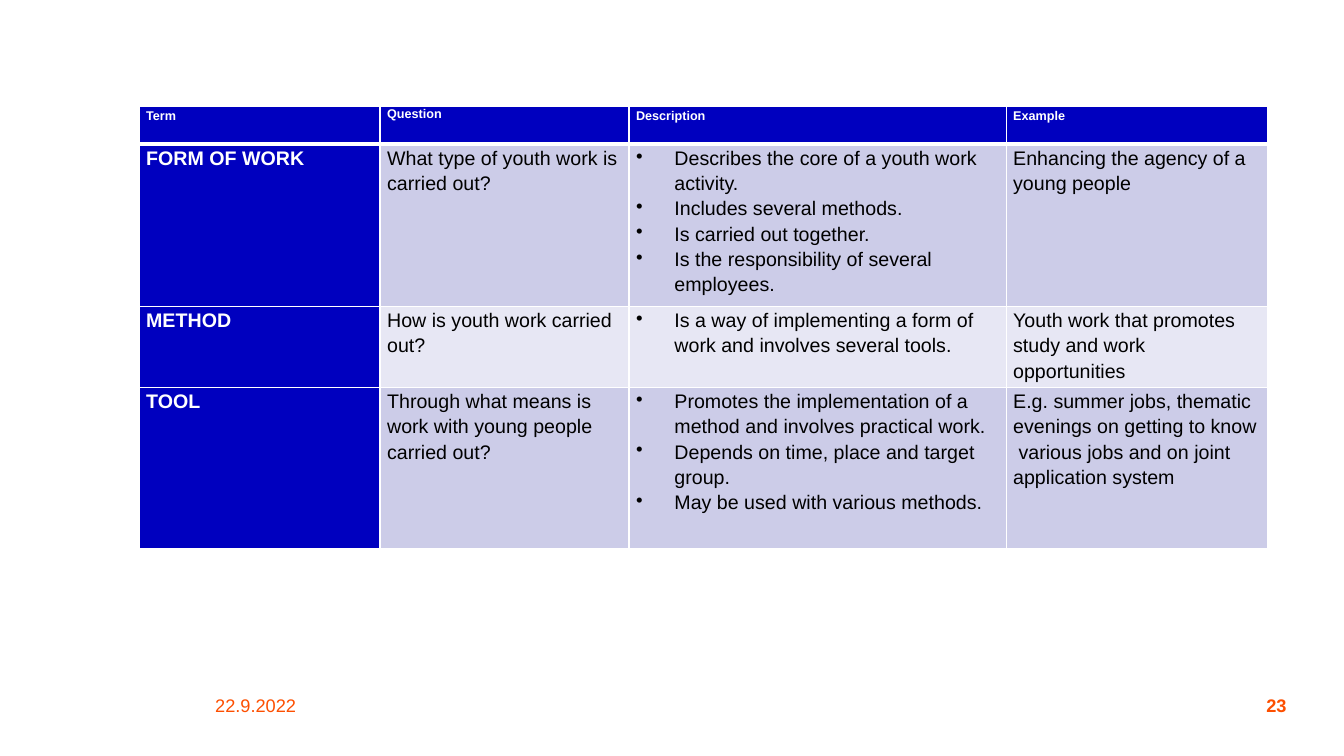
from lxml import etree
from pptx import Presentation
from pptx.dml.color import RGBColor
from pptx.enum import text
from pptx.oxml import ns
from pptx.util import Inches, Pt

COLORS = {"blue": "0000BF", "dark band": "CCCCE8", "light band": "E7E7F4",
          "white": "FFFFFF", "black": "000000", "orange": "FD4F00"}


def add_span(para, words, size, color, bold):
    span = para.add_run()
    span.text = words
    for name, value in {"name": "Arial", "size": Pt(size), "bold": bold}.items():
        setattr(span.font, name, value)
    span.font.color.rgb = RGBColor.from_string(COLORS[color])


def add_border(cell, side, width):
    line = etree.SubElement(cell._tc.get_or_add_tcPr(), ns.qn(f"a:ln{side}"), w=str(Pt(width)))
    fill = etree.SubElement(line, ns.qn("a:solidFill"))
    etree.SubElement(fill, ns.qn("a:srgbClr"), val=COLORS["white"])


deck = Presentation()
deck.slide_width = Inches(13.33)
deck.slide_height = Inches(7.5)
page = deck.slides.add_slide(deck.slide_layouts[6])

footers = [
    ("22.9.2022", 1.82, 1.43, text.PP_ALIGN.CENTER, False),
    ("23", 11.41, 1.35, text.PP_ALIGN.RIGHT, True),
]
for words, left, width, alignment, bold in footers:
    box = page.shapes.add_textbox(Inches(left), Inches(6.86), Inches(width), Inches(0.28))
    frame_format = {"word_wrap": True, "vertical_anchor": text.MSO_ANCHOR.MIDDLE,
                    "margin_left": 0, "margin_top": 0, "margin_right": 0, "margin_bottom": 0}
    for name, value in frame_format.items():
        setattr(box.text_frame, name, value)
    para = box.text_frame.paragraphs[0]
    para.alignment = alignment
    add_span(para, words, 13, "orange", bold)

rows = [
    ["Term", "Question", ["Description"], "Example"],
    ["FORM OF WORK", "What type of youth work is carried out?",
     ["Describes the core of a youth work activity.", "Includes several methods.",
      "Is carried out together.", "Is the responsibility of several employees."],
     "Enhancing the agency of a young people"],
    ["METHOD", "How is youth work carried out?",
     ["Is a way of implementing a form of work and involves several tools."],
     "Youth work that promotes study and work opportunities"],
    ["TOOL", "Through what means is work with young people carried out?",
     ["Promotes the implementation of a method and involves practical work.",
      "Depends on time, place and target group.", "May be used with various methods."],
     "E.g. summer jobs, thematic evenings on getting to know  various jobs and on joint application system"],
]
column_widths = [2.39, 2.47, 3.74, 2.59]
row_heights = [0.37, 1.6, 0.78, 1.6]
table = page.shapes.add_table(len(rows), len(column_widths), Inches(1.38), Inches(1.06),
                              Inches(sum(column_widths)), Inches(sum(row_heights))).table
for column, width in zip(table.columns, column_widths):
    column.width = Inches(width)
for row, height in zip(table.rows, row_heights):
    row.height = Inches(height)

cell_margins = {"margin_left": Inches(0.07), "margin_right": Inches(0.07),
                "margin_top": 0, "margin_bottom": 0}
for r, row in enumerate(rows):
    for c, content in enumerate(row):
        cell = table.cell(r, c)
        for name, value in cell_margins.items():
            setattr(cell, name, value)
        heading = r == 0 or c == 0
        borders = {"L": 1, "R": 1, "T": 3 if r == 1 else 1, "B": 3 if r == 0 else 1}
        for side, width in borders.items():
            add_border(cell, side, width)
        band = "blue" if heading else "dark band" if r % 2 else "light band"
        cell.fill.solid()
        cell.fill.fore_color.rgb = RGBColor.from_string(COLORS[band])

        items = content if isinstance(content, list) else [content]
        for i, words in enumerate(items):
            para = cell.text_frame.paragraphs[0] if i == 0 else cell.text_frame.add_paragraph()
            if c == 2 and r > 0:
                properties = para._p.get_or_add_pPr()
                properties.set("marL", str(Inches(0.38)))
                properties.set("indent", str(-Inches(0.38)))
                etree.SubElement(properties, ns.qn("a:buChar"), char="•")
            if words != "Question":
                para.line_spacing = 1.15
                para.space_after = Pt(8 if i == len(items) - 1 else 0)
            add_span(para, words, 14 if r else 9, "white" if heading else "black", heading)

deck.save("out.pptx")
